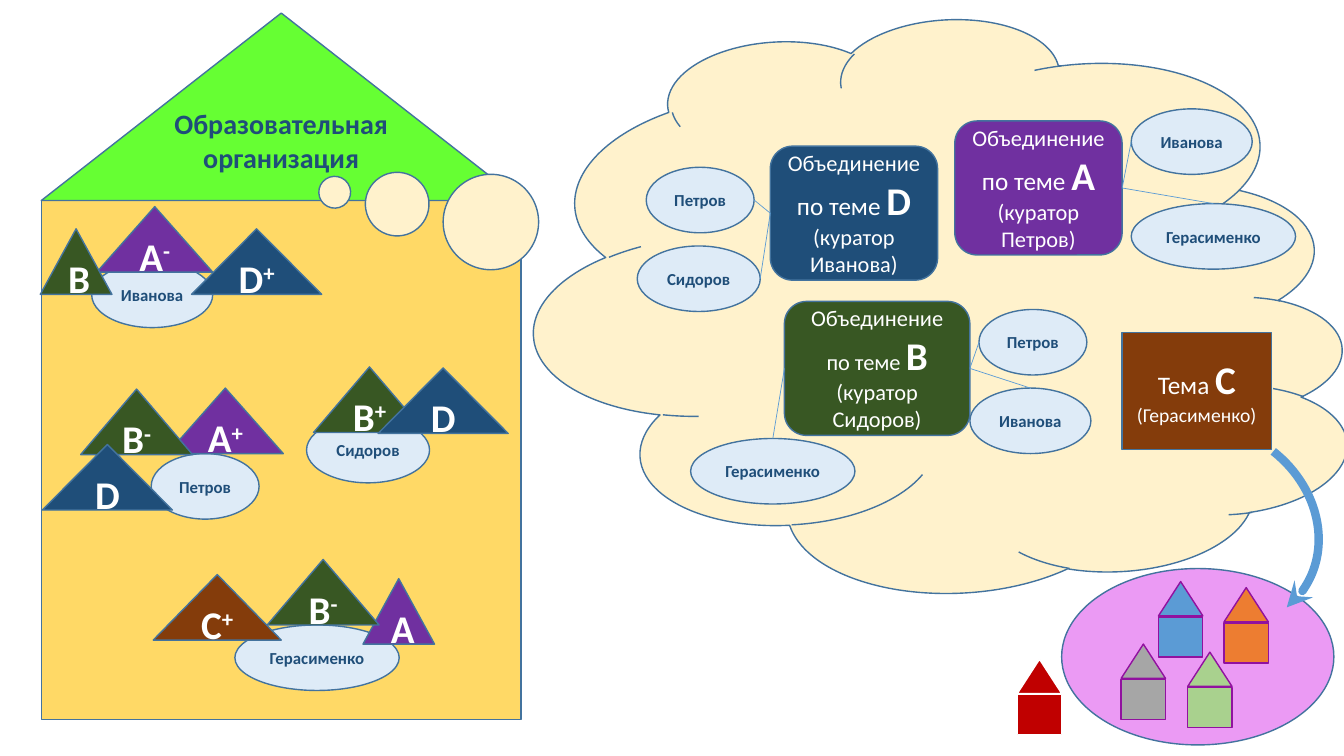
from lxml.etree import SubElement
from pptx import Presentation
from pptx.dml.color import RGBColor
from pptx.enum.shapes import MSO_CONNECTOR, MSO_SHAPE
from pptx.enum.text import MSO_ANCHOR, PP_ALIGN
from pptx.oxml.ns import qn
from pptx.util import Inches, Pt

NAVY = RGBColor(0x1F, 0x4E, 0x79)
VIOLET = RGBColor(0x70, 0x30, 0xA0)
GREEN = RGBColor(0x38, 0x57, 0x23)
BROWN = RGBColor(0x84, 0x3C, 0x0B)
WHITE = RGBColor(0xFF, 0xFF, 0xFF)
EDGE = RGBColor(0x43, 0x73, 0x9E)
BLUE = RGBColor(0x5B, 0x9B, 0xD5)
PALE = RGBColor(0xDE, 0xEB, 0xF7)
GOLD = RGBColor(0xFF, 0xD9, 0x66)
LIME = RGBColor(0x66, 0xFF, 0x33)
CREAM = RGBColor(0xFF, 0xF2, 0xCC)
PINK = RGBColor(0xEB, 0x9A, 0xF4)
PLUM = RGBColor(0x91, 0x11, 0x9F)
ORANGE = RGBColor(0xED, 0x7D, 0x31)
GRAY = RGBColor(0xA6, 0xA6, 0xA6)
MINT = RGBColor(0xA9, 0xD1, 0x8E)
RED = RGBColor(0xC0, 0x00, 0x00)

TONES = {"А": VIOLET, "В": GREEN, "С": BROWN, "D": NAVY}
WIDTHS = {"Иванова": 1.2, "Петров": 1.07, "Сидоров": 1.22, "Герасименко": 1.63}
HIGH = 0.65

STAFF = [("Герасименко", 2.33, 6.2), ("Сидоров", 3.04, 4.14),
         ("Петров", 1.5, 4.5), ("Иванова", 0.91, 2.6)]
SKILLS = [("А", "", 3.6, 5.74, 0.71), ("В", "-", 2.65, 5.55, 1.11),
          ("С", "+", 1.52, 5.7, 1.27), ("А", "-", 0.96, 2.05, 1.15),
          ("В", "", 0.4, 2.27, 0.71), ("D", "+", 1.9, 2.27, 1.29),
          ("А", "+", 1.66, 3.85, 1.15), ("В", "-", 0.8, 3.86, 1.11),
          ("D", "", 0.42, 4.41, 1.29), ("В", "+", 3.11, 3.64, 1.11),
          ("D", "", 3.75, 3.65, 1.29)]

BIG = {"size": Pt(28), "bold": True}
MID = {"size": Pt(18)}
BASE = {"size": Pt(16)}
SMALL = {"size": Pt(14)}
BADGE = {"size": Pt(12), "bold": True, "color": NAVY}
HEAD = {"size": Pt(20), "bold": True, "color": NAVY}

TEAMS = [
    ("D", (7.64, 1.45, 1.66, 1.33),
     [[("Объединение", BASE)], [("по теме ", MID), ("D", BIG)], [("(куратор Иванова)", BASE)]],
     [("Сидоров", 6.32, 2.44, "right", "left"), ("Петров", 6.41, 1.66, "right", "left")]),
    ("В", (7.78, 2.99, 1.84, 1.33),
     [[("Объединение по теме ", BASE), ("В", BIG)], [("(куратор Сидоров)", BASE)]],
     [("Петров", 9.71, 3.07, "left", "right"), ("Герасименко", 6.85, 4.35, "top", "left"),
      ("Иванова", 9.62, 3.85, "top", "right")]),
    ("А", (9.47, 1.2, 1.66, 1.33),
     [[("Объединение", BASE)], [("по теме ", MID), ("А", BIG)], [("(куратор Петров)", BASE)]],
     [("Герасименко", 11.22, 2.02, "top", "right"), ("Иванова", 11.22, 1.08, "left", "right")]),
]
HOMES = [(11.49, 5.77, BLUE, PLUM), (12.14, 5.83, ORANGE, PLUM),
         (11.12, 6.39, GRAY, PLUM), (11.78, 6.47, MINT, PLUM), (10.09, 6.54, RED, WHITE)]

deck = Presentation()
deck.slide_width, deck.slide_height = Inches(13.33), Inches(7.5)
slide = deck.slides.add_slide(deck.slide_layouts[6])


def write(shape, rows):
    frame = shape.text_frame
    frame.word_wrap = True
    frame.vertical_anchor = MSO_ANCHOR.MIDDLE
    for i, row in enumerate(rows):
        para = frame.add_paragraph() if i else frame.paragraphs[0]
        para.alignment = PP_ALIGN.CENTER
        for text, form in row:
            run = para.add_run()
            run.text = text
            form = {"name": "Calibri", "color": WHITE, **form}
            run.font.color.rgb = form.pop("color")
            raised = form.pop("raised", None)
            for key, value in form.items():
                setattr(run.font, key, value)
            if raised:
                run.font._element.set("baseline", raised)


def put(kind, box, fill, rows=(), line=EDGE, width=1, home=slide):
    shape = home.shapes.add_shape(kind, *map(Inches, box))
    shape.shadow.inherit = False
    if fill is None:
        shape.fill.background()
    else:
        shape.fill.solid()
        shape.fill.fore_color.rgb = fill
    shape.line.color.rgb = line
    shape.line.width = Pt(width)
    if rows:
        write(shape, rows)
    return shape


def badge(name, x, y):
    box = (x, y, WIDTHS[name], HIGH)
    put(MSO_SHAPE.OVAL, box, PALE, [[(name, BADGE)]])
    return box


def side(box, where):
    x, y, w, h = box
    return {"left": (x, y + h / 2), "right": (x + w, y + h / 2), "top": (x + w / 2, y)}[where]


def link(start, end):
    wire = slide.shapes.add_connector(MSO_CONNECTOR.STRAIGHT, *map(Inches, start + end))
    wire.line.color.rgb = BLUE
    wire.line.width = Pt(0.5)
    SubElement(wire._element.spPr, qn("a:effectLst"))


put(MSO_SHAPE.OVAL, (10.53, 5.64, 2.7, 1.75), PINK)
put(MSO_SHAPE.RECTANGLE, (0.41, 1.99, 4.76, 5.15), GOLD)
roof = put(MSO_SHAPE.ISOSCELES_TRIANGLE, (0.41, 0.13, 4.76, 1.86), LIME,
           [[("Образовательная организация", HEAD)]])
roof.text_frame.vertical_anchor = MSO_ANCHOR.TOP
roof.text_frame.margin_top = 0
cloud = put(MSO_SHAPE.CLOUD_CALLOUT, (6.47, -0.95, 5.68, 8), CREAM)
cloud.rotation = 86.9
cloud.adjustments[0], cloud.adjustments[1] = -0.258, 0.74

for name, x, y in STAFF:
    badge(name, x, y)
for topic, sign, x, y, w in SKILLS:
    row = [(topic, BIG)]
    if sign:
        row.append((sign, {**BIG, "raised": "30000"}))
    put(MSO_SHAPE.ISOSCELES_TRIANGLE, (x, y, w, HIGH), TONES[topic], [row])

for topic, box, rows, crew in TEAMS:
    put(MSO_SHAPE.ROUNDED_RECTANGLE, box, TONES[topic], rows)
    for name, x, y, start, end in crew:
        link(side(badge(name, x, y), start), side(box, end))

put(MSO_SHAPE.RECTANGLE, (11.13, 3.3, 1.48, 1.16), BROWN,
    [[("Тема ", MID), ("С", BIG)], [("(Герасименко)", SMALL)]])
arc = put(MSO_SHAPE.ARC, (10.88, 4.25, 2.24, 1.94), None, line=BLUE, width=6)
arc.rotation = 32.5
arc.adjustments[0], arc.adjustments[1] = 166.667, 8.455
SubElement(arc.line._get_or_add_ln(), qn("a:tailEnd"), type="stealth")

for x, y, fill, line in HOMES:
    group = slide.shapes.add_group_shape()
    for kind, top, high in ((MSO_SHAPE.RECTANGLE, y + 0.35, 0.4),
                            (MSO_SHAPE.ISOSCELES_TRIANGLE, y, 0.34)):
        put(kind, (x, top, 0.44, high), fill, line=line, home=group)

deck.save("out.pptx")
